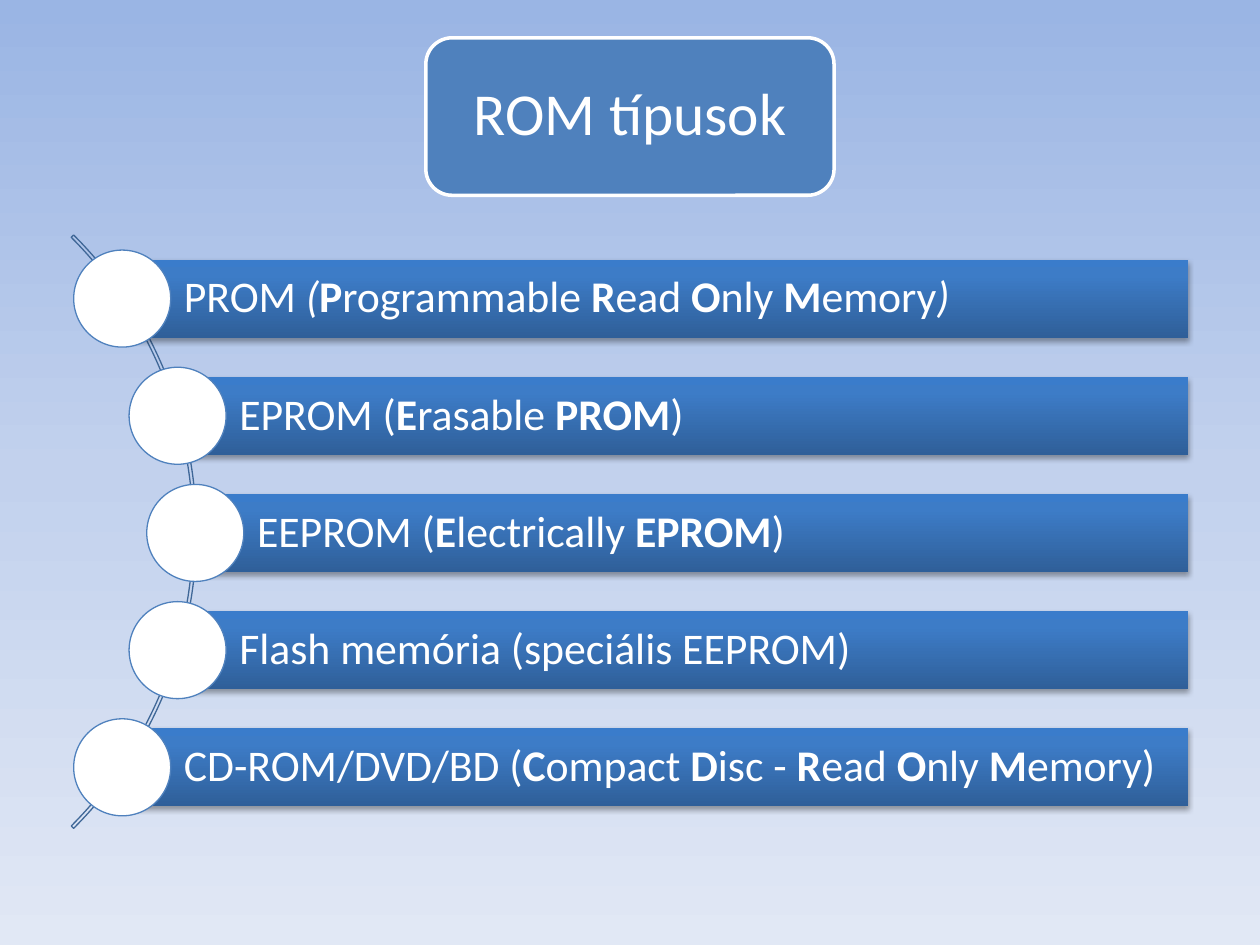
from dataclasses import dataclass

from lxml.etree import SubElement
from pptx import Presentation
from pptx.dml.color import RGBColor
from pptx.enum.shapes import MSO_SHAPE
from pptx.enum.text import MSO_ANCHOR, MSO_AUTO_SIZE, PP_ALIGN
from pptx.oxml import parse_xml
from pptx.oxml.ns import nsdecls, qn
from pptx.util import Inches, Pt


@dataclass(frozen=True)
class Theme:
    font: str = "Calibri"
    title_size: int = 34
    row_size: int = 25
    white: str = "FFFFFF"
    accent: str = "4F81BD"
    arc_line: str = "3F6797"
    shadow: str = "000000"
    background: tuple = ((0, "9AB5E4"), (50, "C2D1ED"), (100, "E1E8F5"))
    bar: tuple = ((0, "2F5F99"), (80, "3D7CC7"), (100, "3A7CCB"))


class SlideBuilder:
    def __init__(self, slide, theme):
        self.s = slide
        self.theme = theme

    def gradient(self, fill, element, stops, angle):
        """Fill an element with a linear gradient."""
        fill.solid()
        solid = next(element.iter(qn("a:solidFill")))
        marks = "".join(
            f'<a:gs pos="{pos * 1000}"><a:srgbClr val="{color}"/></a:gs>'
            for pos, color in stops)
        solid.getparent().replace(solid, parse_xml(
            f'<a:gradFill {nsdecls("a")} rotWithShape="1"><a:gsLst>{marks}</a:gsLst>'
            f'<a:lin ang="{angle * 60000}" scaled="0"/></a:gradFill>'))

    def background(self):
        self.gradient(self.s.background.fill, self.s._element, self.theme.background, 90)

    def shape(self, kind, box, fill=None, line=None, width=0.75):
        sp = self.s.shapes.add_shape(kind, *map(Inches, box))
        sp.shadow.inherit = False
        if fill:
            sp.fill.solid()
            sp.fill.fore_color.rgb = RGBColor.from_string(fill)
        else:
            sp.fill.background()
        if line:
            sp.line.color.rgb = RGBColor.from_string(line)
            sp.line.width = Pt(width)
        else:
            sp.line.fill.background()
        return sp

    def bar(self, box):
        sp = self.shape(MSO_SHAPE.RECTANGLE, box)
        self.gradient(sp.fill, sp._element, self.theme.bar, 270)
        effects = sp._element.spPr.find(qn("a:effectLst"))
        shadow = SubElement(effects, qn("a:outerShdw"), blurRad=str(Pt(3.1)),
                            dist=str(Pt(1.8)), dir="5400000", rotWithShape="0")
        color = SubElement(shadow, qn("a:srgbClr"), val=self.theme.shadow)
        SubElement(color, qn("a:alpha"), val="35000")

    def add_text(self, sp, text, size, left_inset, right_inset, align):
        """Add one paragraph; *stars* mark bold and _underscores_ italic."""
        tf = sp.text_frame
        tf.word_wrap = True
        tf.auto_size = MSO_AUTO_SIZE.NONE
        tf.vertical_anchor = MSO_ANCHOR.MIDDLE
        tf.margin_left, tf.margin_right = Inches(left_inset), Inches(right_inset)
        tf.margin_top = tf.margin_bottom = Inches(0.07)
        p = tf.paragraphs[0]
        p.alignment = align
        p.line_spacing = 0.9
        p.space_after = Pt(0.35 * size)
        for i, part in enumerate(text.split("*")):
            for j, piece in enumerate(part.split("_")):
                if not piece:
                    continue
                r = p.add_run()
                r.text = piece
                r.font.name = self.theme.font
                r.font.size = Pt(size)
                r.font.bold = i % 2 == 1
                r.font.italic = j % 2 == 1
                r.font.color.rgb = RGBColor.from_string(self.theme.white)

    def label(self, text, box):
        tb = self.s.shapes.add_textbox(*map(Inches, box))
        self.add_text(tb, text, self.theme.row_size, 0.49, 0.07, PP_ALIGN.LEFT)

    def title(self, text, box, inset):
        left, top, width, height = box
        self.shape(MSO_SHAPE.ROUNDED_RECTANGLE, box, self.theme.accent, self.theme.white, 2)
        title = self.s.shapes.title
        title.left, title.top = Inches(left + inset), Inches(top + inset)
        title.width, title.height = Inches(width - 2 * inset), Inches(height - 2 * inset)
        # Bring the title text in front of its box
        self.s.shapes._spTree.append(title._element)
        self.add_text(title, text, self.theme.title_size, 0.14, 0.14, PP_ALIGN.CENTER)

    def arc(self, box):
        sp = self.shape(MSO_SHAPE.BLOCK_ARC, box, line=self.theme.arc_line)
        for i, value in enumerate((189, 27, 0.004)):
            sp.adjustments[i] = value

    def row(self, text, left, middle):
        """Bar, its text and the circle centred on the bar's left edge."""
        right, height, circle = 9.43, 0.62, 0.77
        box = (left, middle - height / 2, right - left, height)
        self.bar(box)
        self.label(text, box)
        self.shape(MSO_SHAPE.OVAL,
                   (left - circle / 2, middle - circle / 2, circle, circle),
                   self.theme.white, self.theme.accent)


# Bar left edge and text, from top to bottom
ROWS = (
    (0.97, "PROM _(_*P*rogrammable *R*ead *O*nly *M*emory_)_"),
    (1.41, "EPROM (*E*rasable *PROM*)"),
    (1.55, "EEPROM (*E*lectrically *EPROM*)"),
    (1.41, "Flash memória (speciális EEPROM)"),
    (0.97, "CD-ROM/DVD/BD (*C*ompact *D*isc - *R*ead *O*nly *M*emory)"),
)
FIRST_MIDDLE, PITCH = 2.37, 0.93


def main():
    prs = Presentation()
    prs.slide_width, prs.slide_height = Inches(10), Inches(7.5)
    builder = SlideBuilder(prs.slides.add_slide(prs.slide_layouts[5]), Theme())
    builder.background()

    # Title box
    builder.title("ROM típusok", (3.38, 0.3, 3.24, 1.25), 0.06)

    # Curved list of ROM types
    builder.arc((-5.1, 0.89, 6.66, 6.66))
    for i, (left, text) in enumerate(ROWS):
        builder.row(text, left, FIRST_MIDDLE + i * PITCH)

    prs.save("out.pptx")


if __name__ == "__main__":
    main()
